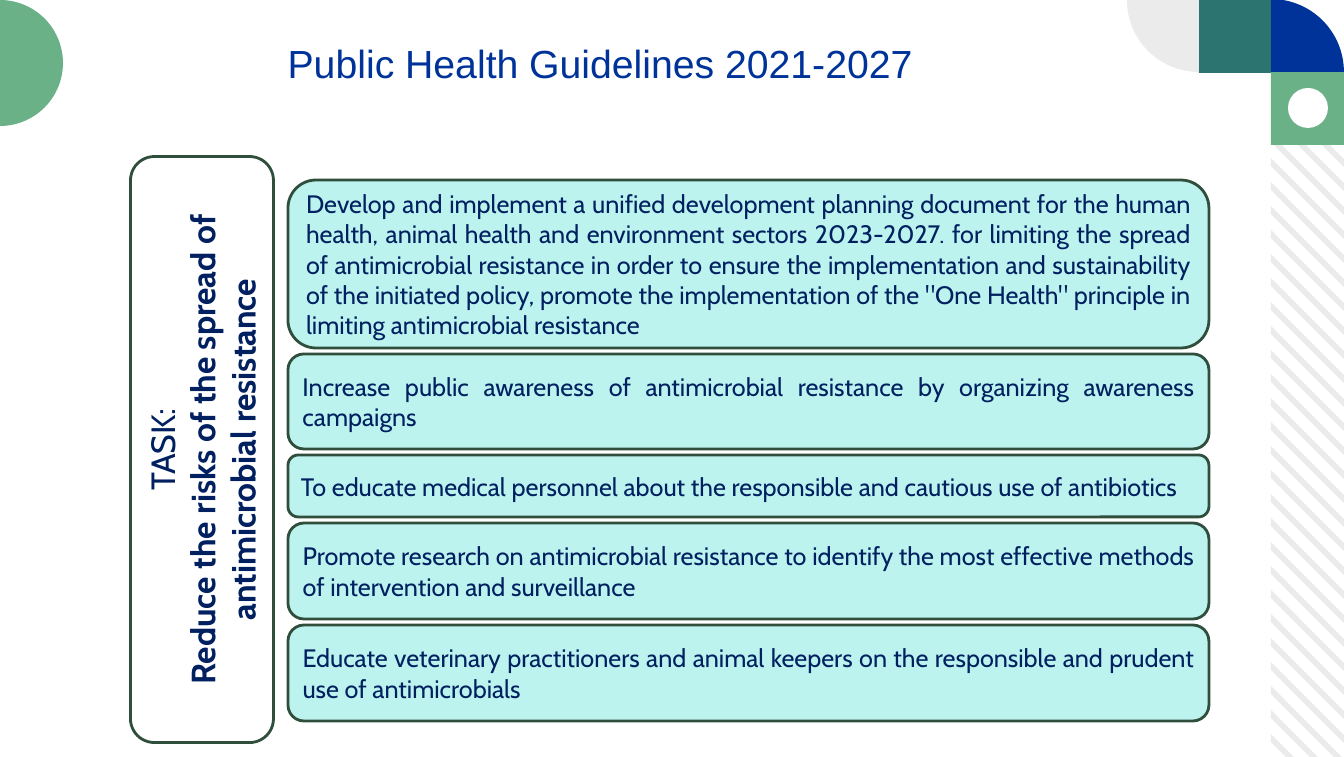
"""Build the public health guidelines slide."""
import math
from dataclasses import dataclass
from pptx import Presentation
from pptx import util as u
from pptx.dml.color import RGBColor
from pptx.enum import shapes, text

TITLE = "Public Health Guidelines 2021-2027"
TASK = ["TASK:", "Reduce the risks of the spread of antimicrobial resistance"]
STEPS = [
    (168, 'Develop and implement a unified development planning document for the human health, '
          'animal health and environment sectors 2023-2027. for limiting the spread of '
          'antimicrobial resistance in order to ensure the implementation and sustainability of '
          'the initiated policy, promote the implementation of the "One Health" principle in '
          'limiting antimicrobial resistance'),
    (95, "Increase public awareness of antimicrobial resistance by organizing awareness campaigns"),
    (62, "To educate medical personnel about the responsible and cautious use of antibiotics"),
    (96, "Promote research on antimicrobial resistance to identify the most effective methods "
         "of intervention and surveillance"),
    (96, "Educate veterinary practitioners and animal keepers on the responsible and prudent "
         "use of antimicrobials"),
]


@dataclass(frozen=True)
class Theme:
    blue: str = "003399"
    navy: str = "002060"
    teal: str = "2C7470"
    green: str = "6BB188"
    grey: str = "ECEBEB"
    white: str = "FFFFFF"
    mint: str = "BDF3EF"
    edge: str = "2F4E3C"
    head: int = 28
    task: int = 24
    step: int = 18


T = Theme()
WIDE, HIGH = 1344, 757
TILE = 72
SIDE = WIDE - TILE - 1


def px(n):
    return u.Emu(round(n * 914400 / 100.8))


def rgb(code):
    return RGBColor.from_string(code)


def paint(shape, fill, line=None):
    shape.shadow.inherit = False
    shape.fill.solid()
    shape.fill.fore_color.rgb = rgb(fill)
    if line:
        shape.line.color.rgb = rgb(line)
        shape.line.width = u.Pt(2)
    else:
        shape.line.fill.background()


def place(kind, x, y, w, h, fill, line=None):
    shape = slide.shapes.add_shape(kind, px(x), px(y), px(w), px(h))
    paint(shape, fill, line)
    return shape


def trace(rings, fill):
    rings = [[(px(x), px(y)) for x, y in ring] for ring in rings]
    pen = slide.shapes.build_freeform(*rings[0][0])
    pen.add_line_segments(rings[0][1:])
    for ring in rings[1:]:
        pen.move_to(*ring[0])
        pen.add_line_segments(ring[1:])
    paint(pen.convert_to_shape(), fill)


def wedge(x, y, size, start, end, fill):
    arc = [(x + size * math.cos(math.radians(a)), y + size * math.sin(math.radians(a)))
           for a in range(start, end + 1, 3)]
    trace([[(x, y)] + arc], fill)


def band(top, thick=8):
    def ends(y):
        low, high = max(0, 2 * TILE + 1 - y), min(TILE + 1, HIGH - y)
        return [(SIDE + low, y + low), (SIDE + high, y + high)]
    return ends(top) + ends(top + thick)[::-1]


def style(frame, size, font, color, align):
    frame.word_wrap = True
    frame.auto_size = text.MSO_AUTO_SIZE.NONE
    frame.vertical_anchor = text.MSO_ANCHOR.MIDDLE
    for para in frame.paragraphs:
        para.alignment = align
        for run in para.runs:
            run.font.size = u.Pt(size)
            run.font.name = font
            run.font.color.rgb = rgb(color)


def card(x, y, w, h, lines, fill, size, align):
    shape = place(shapes.MSO_SHAPE.ROUNDED_RECTANGLE, x, y, w, h, fill, T.edge)
    shape.text_frame.text = "\n".join(lines)
    style(shape.text_frame, size, "Cabin", T.navy, align)
    return shape


deck = Presentation()
deck.slide_width, deck.slide_height = px(WIDE), px(HIGH)
slide = deck.slides.add_slide(deck.slide_layouts[5])

trace([band(86 + 24 * i) for i in range(28)], T.grey)
for x, y, fill in [(SIDE - TILE, 0, T.teal), (SIDE, TILE, T.green)]:
    place(shapes.MSO_SHAPE.RECTANGLE, x, y, TILE + 1, TILE + 1, fill)
wedge(SIDE, TILE, TILE + 1, -90, 0, T.blue)
wedge(SIDE - TILE, 0, TILE, 90, 180, T.grey)
wedge(0, 63, 63, -90, 90, T.green)
place(shapes.MSO_SHAPE.OVAL, 1288, 88, 40, 40, T.white)

head = slide.shapes.title
head.left, head.top, head.width, head.height = px(78), px(34), px(1044), px(52)
head.text_frame.text = TITLE
head.text_frame.margin_top, head.text_frame.margin_bottom = px(6), 0
style(head.text_frame, T.head, "Arial", T.blue, text.PP_ALIGN.CENTER)

task = card(-91, 378, 586, 143, TASK, T.white, T.task, text.PP_ALIGN.CENTER)
task.rotation = 270
task.text_frame.paragraphs[1].runs[0].font.bold = True

top = 180
for tall, line in STEPS:
    card(288, top, 921, tall, [line], T.mint, T.step, text.PP_ALIGN.JUSTIFY)
    top += tall + 6

deck.save("out.pptx")
